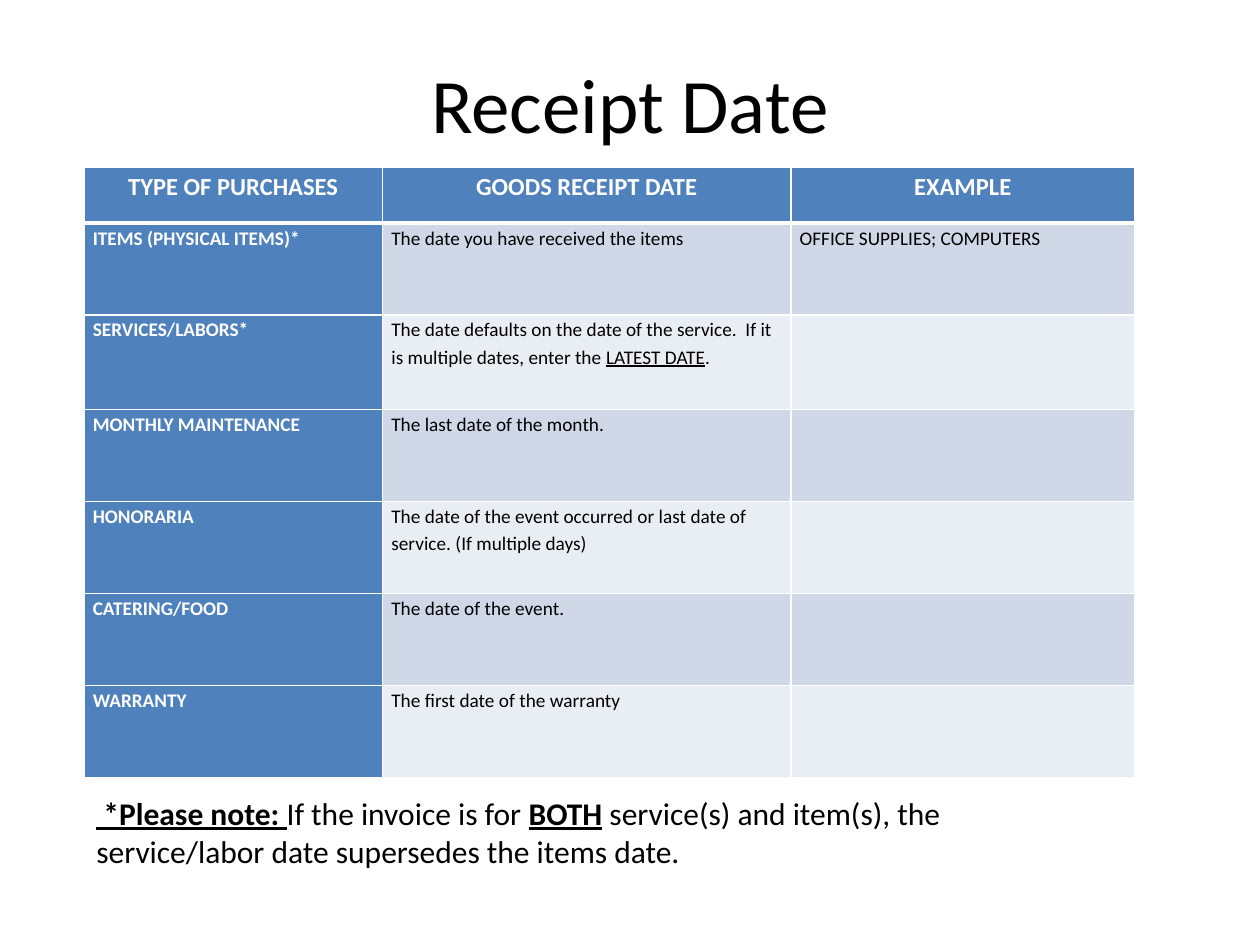
from lxml.etree import SubElement
from pptx import Presentation
from pptx.dml.color import RGBColor
from pptx.enum.text import MSO_ANCHOR, PP_ALIGN
from pptx.oxml.ns import qn
from pptx.util import Inches, Pt

COLORS = {"text": "000000", "white": "FFFFFF", "accent": "4F81BD",
          "odd": "D0D8E8", "even": "E9EDF4"}
FONT = "Calibri"
WIDTH, HEIGHT = 10, 7.5
LEFT = WIDTH / 15
TABLE_TOP = 1.33
COLUMNS = [2.37, 3.24, 2.73]
ROW_HEIGHTS = [0.44, 0.73, 0.75, 0.73, 0.73, 0.73, 0.73]

HEADERS = ["TYPE OF PURCHASES", "GOODS RECEIPT DATE", "EXAMPLE"]
# Each cell is a list of (text, style) runs; style letters: b bold, u underlined
PURCHASES = [
    ("ITEMS (PHYSICAL ITEMS)*", [("The date you have received the items", "")],
     [("OFFICE SUPPLIES; COMPUTERS", "")]),
    ("SERVICES/LABORS*",
     [("The date defaults on the date of the service.  If it is multiple dates, enter the ", ""),
      ("LATEST DATE", "u"), (".", "")], []),
    ("MONTHLY MAINTENANCE", [("The last date of the month.", "")], []),
    ("HONORARIA",
     [("The date of the event occurred or last date of service. (If multiple days)", "")], []),
    ("CATERING/FOOD", [("The date of the event.", "")], []),
    ("WARRANTY", [("The first date of the warranty", "")], []),
]
NOTE = [
    (" *Please note: ", "bu"), ("If the invoice is for ", ""), ("BOTH", "bu"),
    (" service(s) and item(s), the service/labor date supersedes the items date.", ""),
]


def rgb(name):
    return RGBColor.from_string(COLORS[name])


def add_runs(p, runs, size, color="text"):
    for text, style in runs:
        r = p.add_run()
        r.text = text
        r.font.name = FONT
        r.font.size = Pt(size)
        r.font.color.rgb = rgb(color)
        r.font.bold = "b" in style
        r.font.underline = "u" in style


def add_text(slide, left, top, width, height, runs, size,
             align=PP_ALIGN.LEFT, anchor=MSO_ANCHOR.TOP):
    box = slide.shapes.add_textbox(*map(Inches, (left, top, width, height)))
    tf = box.text_frame
    tf.word_wrap = True
    tf.vertical_anchor = anchor
    tf.paragraphs[0].alignment = align
    add_runs(tf.paragraphs[0], runs, size)


def set_borders(cell, top, bottom):
    """Draw white cell borders; top and bottom are widths in points."""
    tc_pr = cell._tc.get_or_add_tcPr()
    widths = {"a:lnL": 1, "a:lnR": 1, "a:lnT": top, "a:lnB": bottom}
    for i, (tag, width) in enumerate(widths.items()):
        ln = SubElement(tc_pr, qn(tag), w=str(Pt(width)))
        fill = SubElement(ln, qn("a:solidFill"))
        SubElement(fill, qn("a:srgbClr"), val=COLORS["white"])
        tc_pr.insert(i, ln)


def fill_cell(cell, runs, fill, size=11, color="text", align=PP_ALIGN.LEFT):
    cell.fill.solid()
    cell.fill.fore_color.rgb = rgb(fill)
    if runs:
        cell.margin_left = cell.margin_right = Inches(0.07)
        cell.margin_top = cell.margin_bottom = 0
        p = cell.text_frame.paragraphs[0]
        p.alignment = align
        p.line_spacing = 1.15
        add_runs(p, runs, size, color)


def add_purchase_table(slide):
    frame = slide.shapes.add_table(
        len(ROW_HEIGHTS), len(COLUMNS), Inches(LEFT), Inches(TABLE_TOP),
        Inches(sum(COLUMNS)), Inches(sum(ROW_HEIGHTS)))
    table = frame.table
    for column, width in zip(table.columns, COLUMNS):
        column.width = Inches(width)
    for row, height in zip(table.rows, ROW_HEIGHTS):
        row.height = Inches(height)

    for cell, header in zip(table.rows[0].cells, HEADERS):
        fill_cell(cell, [(header, "b")], "accent", 14, "white", PP_ALIGN.CENTER)
        set_borders(cell, 1, 3)
    for i, (purchase, date, example) in enumerate(PURCHASES, 1):
        band = "odd" if i % 2 else "even"
        fill_cell(table.cell(i, 0), [(purchase, "b")], "accent", color="white")
        fill_cell(table.cell(i, 1), date, band)
        fill_cell(table.cell(i, 2), example, band)
        for cell in table.rows[i].cells:
            set_borders(cell, 3 if i == 1 else 1, 1)


def main():
    prs = Presentation()
    prs.slide_width, prs.slide_height = Inches(WIDTH), Inches(HEIGHT)
    slide = prs.slides.add_slide(prs.slide_layouts[6])
    add_text(slide, WIDTH * 0.05, HEIGHT * 0.04, WIDTH * 0.9, 1.03,
             [("Receipt Date", "")], 44, PP_ALIGN.CENTER, MSO_ANCHOR.MIDDLE)
    add_purchase_table(slide)
    add_text(slide, LEFT, 6.25, 7.83, 1.01, NOTE, 18)
    prs.save("out.pptx")


if __name__ == "__main__":
    main()
